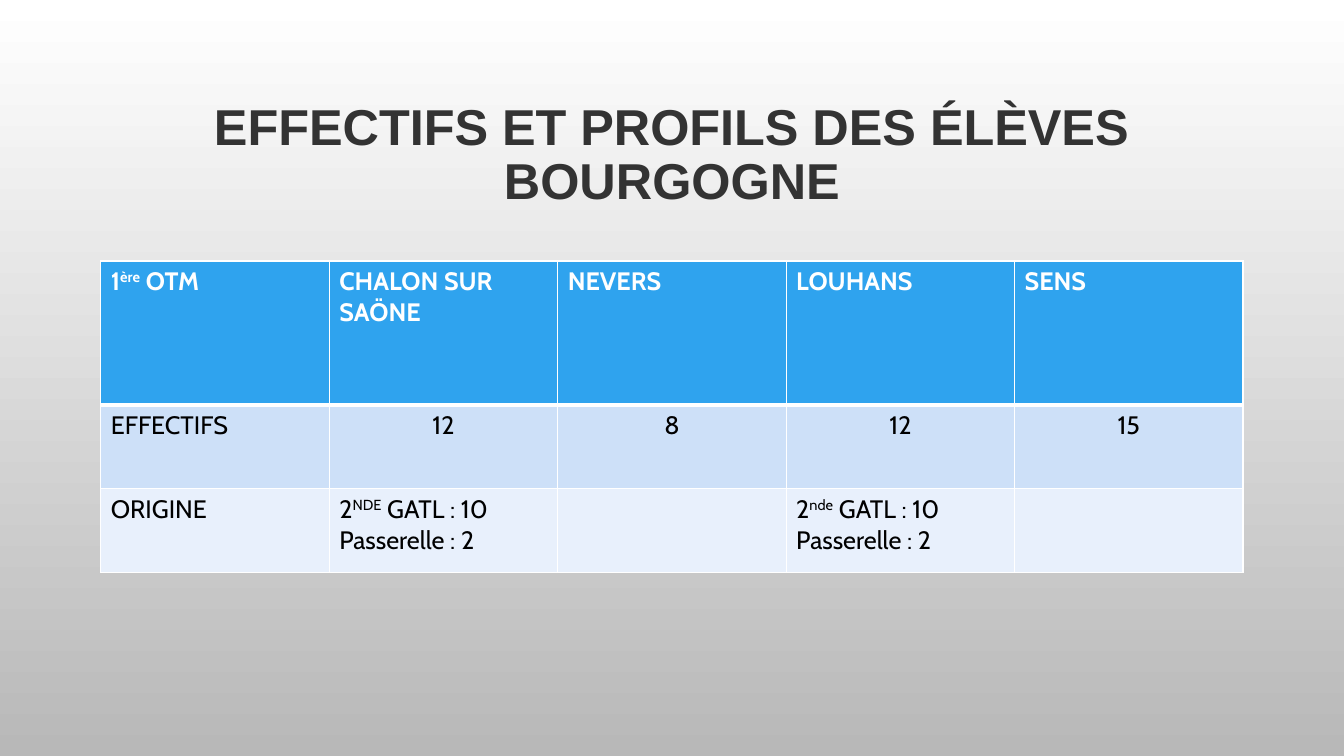
from lxml import etree
from pptx import Presentation
from pptx import util as u
from pptx.dml.color import RGBColor
from pptx.enum import text
from pptx.oxml import ns

COLORS = {
    "top": "FFFFFF", "bottom": "B8B8B8", "title": "333333", "border": "FFFFFF",
    "header": "2FA3EE", "band": "CDE0F8", "light": "E8F0FC",
    "white": "FFFFFF", "black": "000000",
}
ROWS = [
    ["1^ère^ OTM", "CHALON SUR SAÖNE", "NEVERS", "LOUHANS", "SENS"],
    ["EFFECTIFS", "12", "8", "12", "15"],
    ["ORIGINE", "2^NDE^ GATL : 10\nPasserelle : 2", "",
     "2^nde^ GATL : 10\nPasserelle : 2", ""],
]
ROW_STYLES = [
    {"fill": "header", "ink": "white", "bold": True, "height": 1.43},
    {"fill": "band", "ink": "black", "bold": False, "height": 0.83},
    {"fill": "light", "ink": "black", "bold": False, "height": 0.83},
]


class EnrolmentSlide:
    """Style and drawing methods for the enrolment slide."""

    def __init__(self, deck):
        self.slide = deck.slides.add_slide(deck.slide_layouts[5])

    def color(self, name):
        return RGBColor.from_string(COLORS[name])

    def style(self, font, ink, **values):
        for key, value in values.items():
            setattr(font, key, value)
        font.color.rgb = self.color(ink)

    def background(self):
        fill = self.slide.background.fill
        fill.gradient()
        fill.gradient_angle = 270
        for stop, name, position in zip(fill.gradient_stops, ("top", "bottom"), (0, 1)):
            stop.color.rgb = self.color(name)
            stop.position = position

    def title(self, wording, left, top, width, height):
        heading = self.slide.shapes.title
        place = {"left": left, "top": top, "width": width, "height": height}
        for key, value in place.items():
            setattr(heading, key, u.Inches(value))
        frame = heading.text_frame
        frame.text = wording
        layout = {"word_wrap": True, "auto_size": text.MSO_AUTO_SIZE.NONE,
                  "vertical_anchor": text.MSO_ANCHOR.MIDDLE}
        for key, value in layout.items():
            setattr(frame, key, value)
        paragraph = frame.paragraphs[0]
        paragraph.alignment = text.PP_ALIGN.CENTER
        paragraph.line_spacing = 0.9
        for run in paragraph.runs:
            self.style(run.font, "title", name="Arial", size=u.Pt(36), bold=True)

    def border(self, cell, side, points):
        properties = cell._tc.get_or_add_tcPr()
        line = etree.SubElement(properties, ns.qn(f"a:ln{side}"), w=str(u.Pt(points)))
        fill = etree.SubElement(line, ns.qn("a:solidFill"))
        etree.SubElement(fill, ns.qn("a:srgbClr"), val=COLORS["border"])

    def cell(self, cell, wording, look, borders):
        for side, points in borders.items():
            self.border(cell, side, points)
        cell.fill.solid()
        cell.fill.fore_color.rgb = self.color(look["fill"])
        frame = cell.text_frame
        frame.text = wording.replace("^", "")
        for paragraph, line in zip(frame.paragraphs, wording.split("\n")):
            paragraph.clear()
            if line.isdigit():
                paragraph.alignment = text.PP_ALIGN.CENTER
            for index, part in enumerate(line.split("^")):
                if not part:
                    continue
                run = paragraph.add_run()
                run.text = part
                self.style(run.font, look["ink"], name="Cabin", size=u.Pt(18),
                           bold=look["bold"])
                if index % 2:
                    run._r.get_or_add_rPr().set("baseline", "30000")

    def table(self, rows, looks, left, top, width):
        height = sum(look["height"] for look in looks)
        frame = self.slide.shapes.add_table(
            len(rows), len(rows[0]), *map(u.Inches, (left, top, width, height)))
        grid = frame.table
        for index, (wordings, look) in enumerate(zip(rows, looks)):
            grid.rows[index].height = u.Inches(look["height"])
            borders = {"L": 1, "R": 1, "T": 3 if index == 1 else 1,
                       "B": 3 if index == 0 else 1}
            for column, wording in enumerate(wordings):
                self.cell(grid.cell(index, column), wording, look, borders)


def main():
    deck = Presentation()
    deck.slide_width, deck.slide_height = u.Inches(13.33), u.Inches(7.5)
    page = EnrolmentSlide(deck)
    page.background()
    page.title("EFFECTIFS ET PROFILS DES ÉLÈVES\vBOURGOGNE", 1, 0.68, 11.33, 1.74)
    page.table(ROWS, ROW_STYLES, 1, 2.59, 11.33)
    deck.save("out.pptx")


if __name__ == "__main__":
    main()
